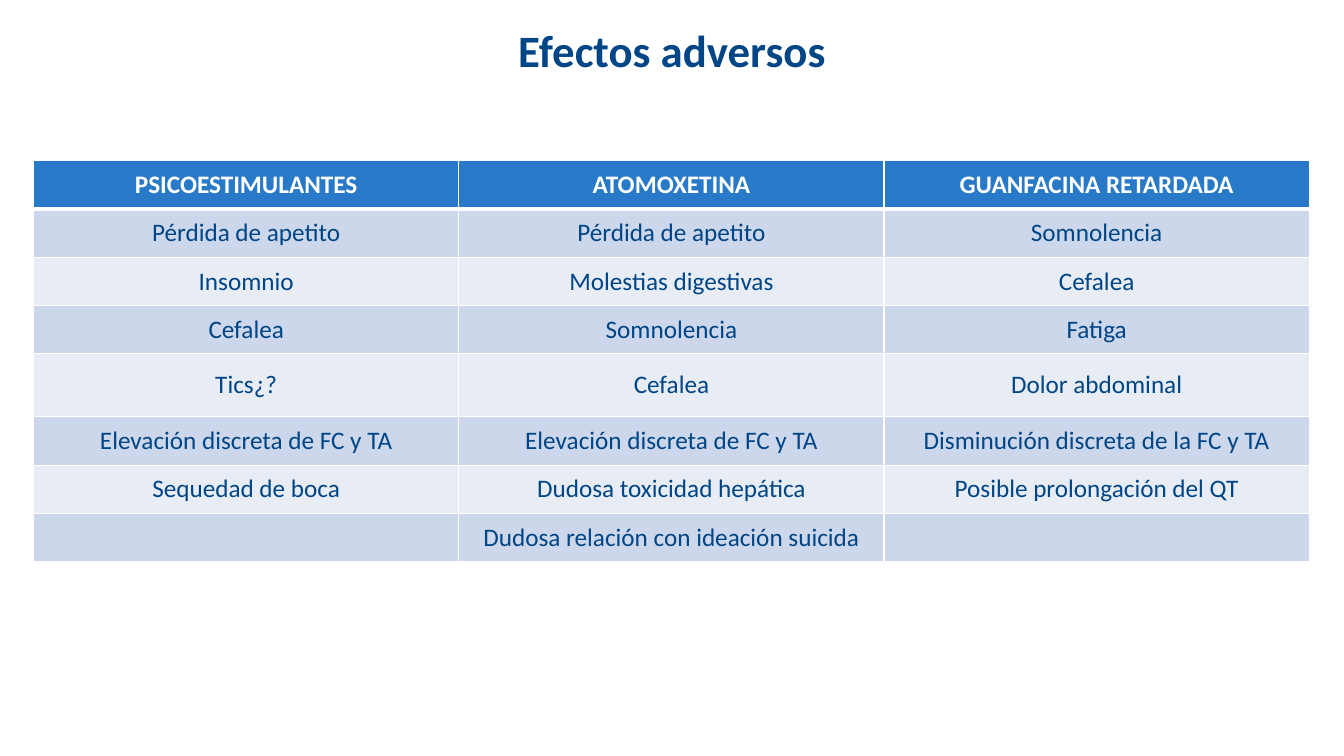
"""Slide comparing the adverse effects of three treatments."""
from lxml.etree import SubElement
from pptx import Presentation
from pptx.dml.color import RGBColor
from pptx.enum.text import MSO_ANCHOR as Anchor, PP_ALIGN as Align
from pptx.oxml.ns import qn
from pptx.util import Pt

PX = 9525
NAVY, WHITE, BLUE = "004586", "FFFFFF", "287AC8"
BANDS = ["E8ECF5", "CDD7EB"]
EFFECTS = [
    ["PSICOESTIMULANTES", "ATOMOXETINA", "GUANFACINA RETARDADA"],
    ["Pérdida de apetito", "Pérdida de apetito", "Somnolencia"],
    ["Insomnio", "Molestias digestivas", "Cefalea"],
    ["Cefalea", "Somnolencia", "Fatiga"],
    ["Tics¿?", "Cefalea", "Dolor abdominal"],
    ["Elevación discreta de FC y TA", "Elevación discreta de FC y TA",
     "Disminución discreta de la FC y TA"],
    ["Sequedad de boca", "Dudosa toxicidad hepática", "Posible prolongación del QT"],
    ["", "Dudosa relación con ideación suicida", ""],
]
ROW_HEIGHTS = [46, 46, 46, 46, 60, 46, 46, 46]
COLUMN_WIDTH = 405


def rgb(color):
    return RGBColor.from_string(color)


def write(frame, text, size, color, bold):
    paragraph = frame.paragraphs[0]
    paragraph.alignment = Align.CENTER
    if text:
        font = paragraph.add_run()
        font.text = text
        font = font.font
        for key, value in {"name": "Calibri", "size": Pt(size), "bold": bold}.items():
            setattr(font, key, value)
        font.color.rgb = rgb(color)


deck = Presentation()
deck.slide_width, deck.slide_height = 1280 * PX, 720 * PX
slide = deck.slides.add_slide(deck.slide_layouts[5])

heading = slide.shapes.title
place = {"left": 64, "top": 16, "width": 1152, "height": 63}
for side, length in place.items():
    setattr(heading, side, length * PX)
heading.text_frame.vertical_anchor = Anchor.MIDDLE
write(heading.text_frame, "Efectos adversos", 32, NAVY, True)

effects_table = slide.shapes.add_table(
    len(EFFECTS), 3, 32 * PX, 153 * PX, 3 * COLUMN_WIDTH * PX, sum(ROW_HEIGHTS) * PX).table
for column in effects_table.columns:
    column.width = COLUMN_WIDTH * PX

for r, (effects, height) in enumerate(zip(EFFECTS, ROW_HEIGHTS)):
    effects_table.rows[r].height = height * PX
    header = r == 0
    borders = {"lnL": 1, "lnR": 1, "lnT": 3 if r == 1 else 1, "lnB": 3 if header else 1}
    for c, effect in enumerate(effects):
        cell = effects_table.cell(r, c)
        cell.vertical_anchor = Anchor.MIDDLE
        write(cell.text_frame, effect, 18, WHITE if header else NAVY, header)
        properties = cell._tc.get_or_add_tcPr()
        for edge, points in borders.items():
            border = SubElement(properties, qn(f"a:{edge}"), w=str(Pt(points)))
            SubElement(SubElement(border, qn("a:solidFill")), qn("a:srgbClr"), val=WHITE)
        cell.fill.solid()
        cell.fill.fore_color.rgb = rgb(BLUE if header else BANDS[r % 2])

deck.save("out.pptx")
